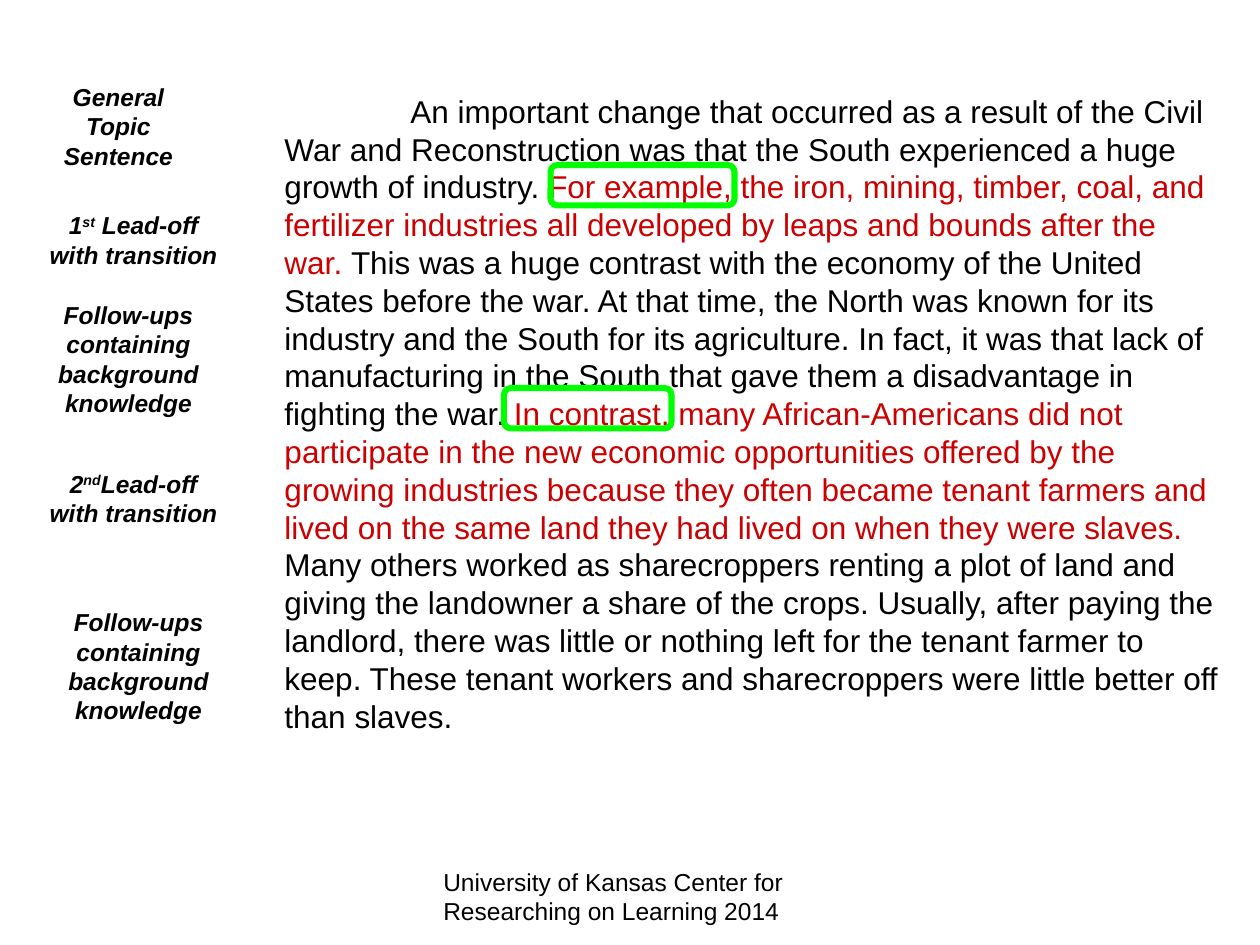
from dataclasses import dataclass

from lxml.etree import SubElement
from pptx import Presentation
from pptx.dml.color import RGBColor
from pptx.enum.shapes import MSO_SHAPE
from pptx.enum.text import MSO_AUTO_SIZE, PP_ALIGN
from pptx.oxml.ns import qn
from pptx.shapes.autoshape import Shape
from pptx.slide import Slide
from pptx.util import Inches, Pt

BLACK, RED, GREEN = "000000", "CC0000", "00FF00"


@dataclass
class Span:
    text: str
    color: str = BLACK
    superscript: bool = False


@dataclass
class TextBlock:
    left: float
    top: float
    width: float
    height: float
    spans: list[Span]
    size: int = 14
    is_label: bool = False
    grows: bool = True
    tab_stop: float = 0


@dataclass
class Frame:
    left: float
    top: float
    width: float


ESSAY = [
    Span("\tAn important change that occurred as a result of the Civil War and "
         "Reconstruction was that the South experienced a huge growth of industry. "),
    Span("For example, the iron, mining, timber, coal, and fertilizer industries "
         "all developed by leaps and bounds after the war. ", RED),
    Span("This was a huge contrast with the economy of the United States before the "
         "war. At that time, the North was known for its industry and the South for "
         "its agriculture. In fact, it was that lack of manufacturing in the South "
         "that gave them a disadvantage in fighting the war."),
    Span(" In contrast, many African-Americans did not participate in the new economic "
         "opportunities offered by the growing industries because they often became "
         "tenant farmers and lived on the same land they had lived on when they were "
         "slaves.", RED),
    Span(" Many others worked as sharecroppers renting a plot of land and giving the "
         "landowner a share of the crops. Usually, after paying the landlord, there "
         "was little or nothing left for the tenant farmer to keep. These tenant "
         "workers and sharecroppers were little better off than slaves."),
]
FOLLOW_UPS = [Span("Follow-ups containing background knowledge")]
FIRST_LEAD_OFF = [Span("1"), Span("st", superscript=True),
                  Span(" Lead-off with transition")]
SECOND_LEAD_OFF = [Span("2"), Span("nd", superscript=True),
                   Span("Lead-off with transition")]
CREDIT = [Span("University of Kansas Center for Researching on Learning 2014")]

TEXT_BLOCKS = [
    TextBlock(2.16, 0.68, 7.64, 5.21, ESSAY, size=18, tab_stop=1),
    TextBlock(0.27, 0.6, 1.34, 0.8, [Span("General Topic Sentence")], is_label=True),
    TextBlock(0.27, 1.62, 1.58, 0.57, FIRST_LEAD_OFF, is_label=True),
    TextBlock(0.35, 2.33, 1.34, 1.03, FOLLOW_UPS, is_label=True),
    TextBlock(0.27, 3.67, 1.58, 0.57, SECOND_LEAD_OFF, is_label=True),
    TextBlock(0.43, 4.77, 1.34, 1.03, FOLLOW_UPS, is_label=True),
    TextBlock(3.42, 6.83, 3.17, 0.5, CREDIT, grows=False),
]
TRANSITION_FRAMES = [Frame(4.37, 1.31, 1.46), Frame(4, 3.08, 1.33)]
FRAME_HEIGHT = 0.32


def rgb(color: str) -> RGBColor:
    return RGBColor.from_string(color)


def add_text_block(page: Slide, block: TextBlock) -> Shape:
    box = page.shapes.add_textbox(Inches(block.left), Inches(block.top),
                                  Inches(block.width), Inches(block.height))
    frame = box.text_frame
    frame.word_wrap = True
    frame.auto_size = (MSO_AUTO_SIZE.SHAPE_TO_FIT_TEXT if block.grows
                       else MSO_AUTO_SIZE.NONE)
    para = frame.paragraphs[0]
    para.alignment = PP_ALIGN.CENTER if block.is_label else PP_ALIGN.LEFT
    if block.tab_stop:
        tabs = SubElement(para._p.get_or_add_pPr(), qn("a:tabLst"))
        SubElement(tabs, qn("a:tab"), pos=str(Inches(block.tab_stop)), algn="l")
    for span in block.spans:
        run = para.add_run()
        run.text = span.text
        font = run.font
        font.name = "Arial"
        font.size = Pt(block.size)
        font.bold = font.italic = block.is_label
        font.color.rgb = rgb(span.color)
        if span.superscript:
            run._r.get_or_add_rPr().set("baseline", "30000")
    return box


def add_transition_frame(page: Slide, frame: Frame) -> Shape:
    outline = page.shapes.add_shape(
        MSO_SHAPE.ROUNDED_RECTANGLE, Inches(frame.left), Inches(frame.top),
        Inches(frame.width), Inches(FRAME_HEIGHT))
    outline.shadow.inherit = False
    outline.fill.background()
    outline.line.color.rgb = rgb(GREEN)
    outline.line.width = Pt(3.5)
    return outline


def main() -> None:
    deck = Presentation()
    deck.slide_width, deck.slide_height = Inches(10), Inches(7.5)
    page = deck.slides.add_slide(deck.slide_layouts[6])
    for block in TEXT_BLOCKS:
        add_text_block(page, block)
    for frame in TRANSITION_FRAMES:
        add_transition_frame(page, frame)
    deck.save("out.pptx")


if __name__ == "__main__":
    main()
